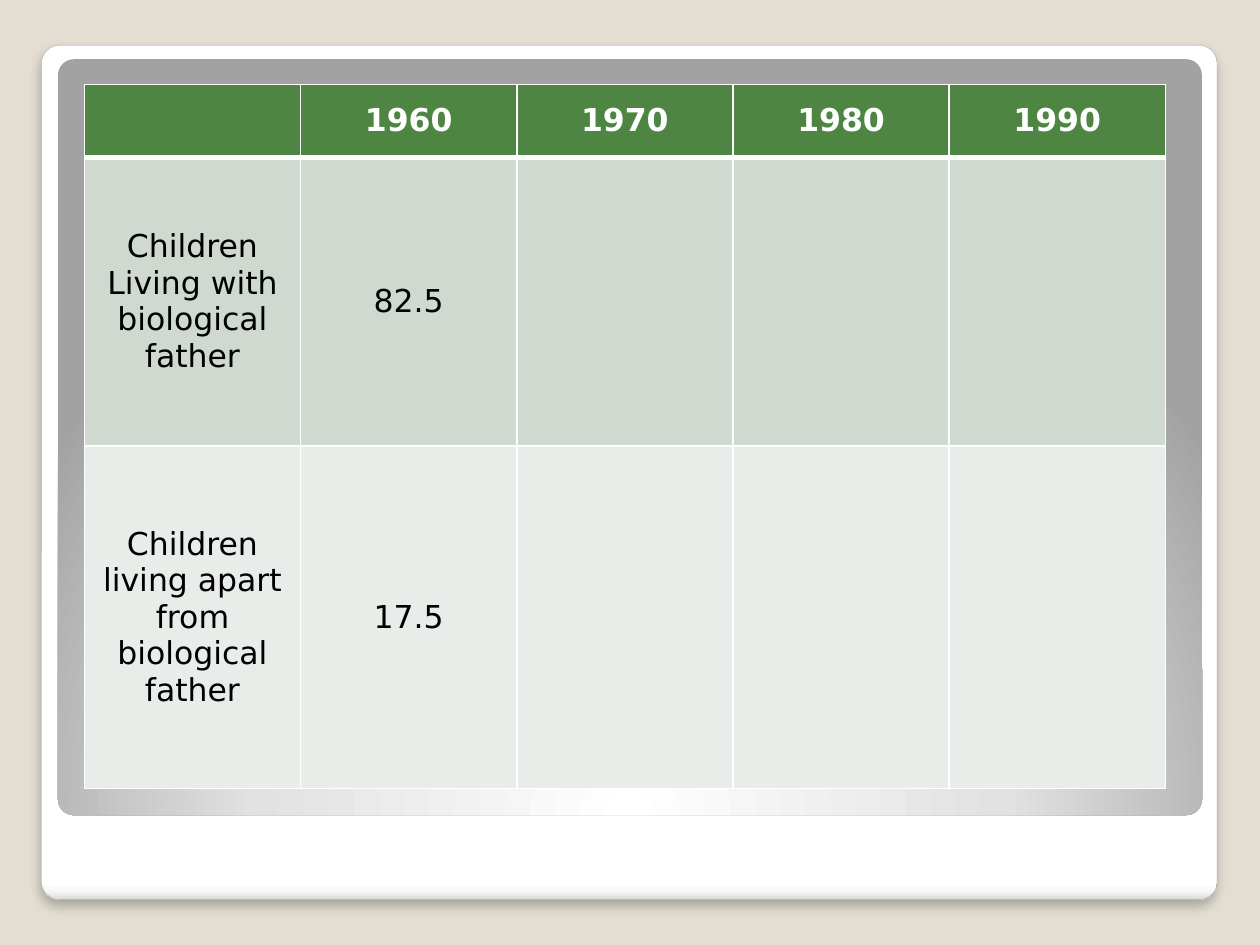
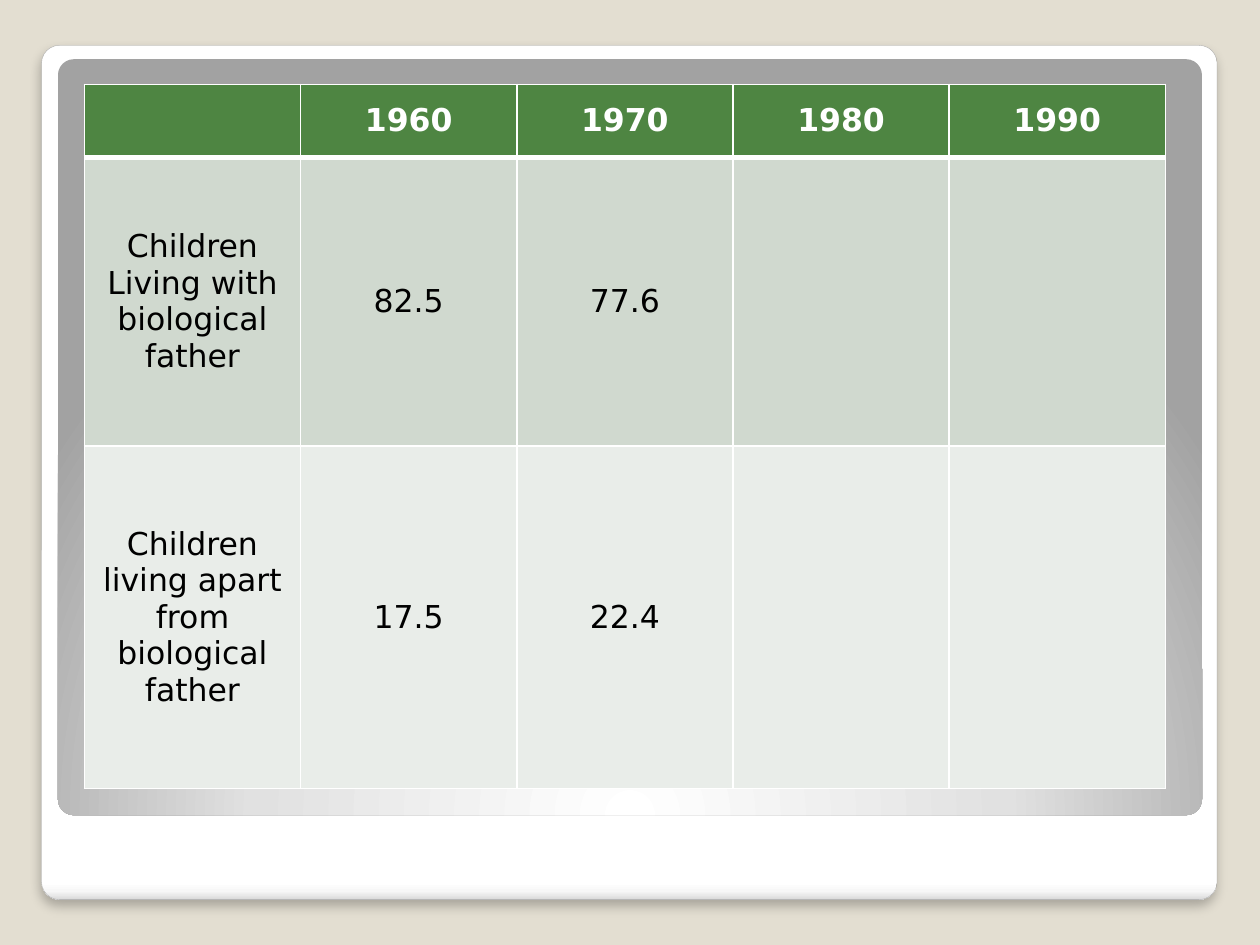
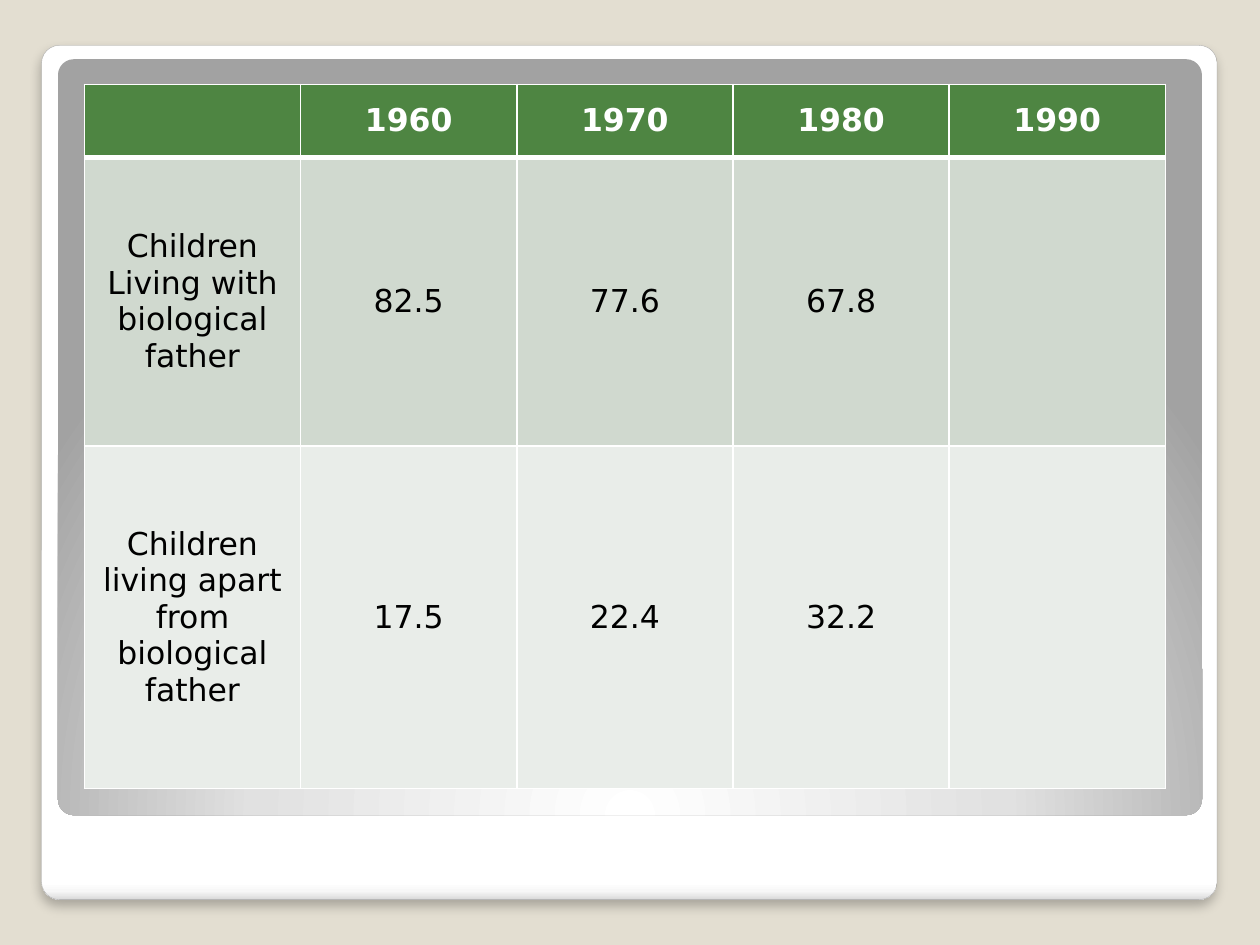
from pptx import Presentation
from pptx.dml.color import RGBColor
from pptx.enum.shapes import MSO_SHAPE
from pptx.enum.text import MSO_ANCHOR, PP_ALIGN
from pptx.oxml import parse_xml
from pptx.oxml.ns import nsdecls, qn
from pptx.util import Inches, Pt

BACKGROUND = "E3DED1"
WHITE = "FFFFFF"
BLACK = "000000"
ROW_FILLS = ["4E8542", "D0D9CF", "E9EDE9"]
ROW_HEIGHTS = [0.58, 2.29, 2.72]
TABLE_WIDTH = 8.58

ROWS = [
    ["", "1960", "1970", "1980", "1990"],
    ["Children Living with biological father", "82.5", "77.6", "67.8", ""],
    ["Children living apart from biological father", "17.5", "22.4", "32.2", ""],
]

PANELS = [
    (0.33, 0.36, 9.33, 6.78,
     [(0, WHITE), (98, WHITE), (99, "F7F7F7"), (100, "DADADA")],
     '<a:lin ang="5400000" scaled="0"/>'),
    (0.46, 0.47, 9.08, 6,
     [(0, WHITE), (55, "E1E1E1"), (100, "A2A2A2")],
     '<a:path path="circle"><a:fillToRect l="50000" t="175000" r="50000" b="-75000"/></a:path>'),
]


def color(hex_value):
    return RGBColor.from_string(hex_value)


def write_text(cell, text, size=18, font="DejaVu Sans", text_color=BLACK, bold=False):
    cell.vertical_anchor = MSO_ANCHOR.MIDDLE
    paragraph = cell.text_frame.paragraphs[0]
    paragraph.alignment = PP_ALIGN.CENTER
    run = paragraph.add_run()
    run.text = text
    run.font.size = Pt(size)
    run.font.name = font
    run.font.bold = bold
    run.font.color.rgb = color(text_color)


presentation = Presentation()
presentation.slide_width = Inches(10)
presentation.slide_height = Inches(7.5)
layout = presentation.slide_layouts[6]
background = presentation.slide_master.background.fill
background.solid()
background.fore_color.rgb = color(BACKGROUND)

slides = [presentation.slides.add_slide(layout) for number in range(3)]

panel_shapes = []
for left, top, width, height, stops, direction in PANELS:
    shape = slides[0].shapes.add_shape(
        MSO_SHAPE.ROUNDED_RECTANGLE,
        Inches(left), Inches(top), Inches(width), Inches(height))
    shape.adjustments[0] = 0.021
    shape.shadow.inherit = False
    shape.line.fill.background()
    shape.fill.solid()
    stop_list = "".join(
        f'<a:gs pos="{position * 1000}"><a:srgbClr val="{stop_color}"/></a:gs>'
        for position, stop_color in stops)
    gradient = parse_xml(
        f'<a:gradFill {nsdecls("a")} rotWithShape="1">'
        f'<a:gsLst>{stop_list}</a:gsLst>{direction}</a:gradFill>')
    properties = shape.element.spPr
    properties.replace(properties.find(qn("a:solidFill")), gradient)
    panel_shapes.append(shape)

frame = panel_shapes[0]
frame.line.color.rgb = color("A4A4A4")
frame.line.width = Pt(0.16)
frame.element.spPr.find(qn("a:effectLst")).append(parse_xml(
    f'<a:outerShdw {nsdecls("a")} blurRad="{Pt(6)}" dist="{Pt(4)}" dir="5400000" '
    f'algn="t" rotWithShape="0"><a:srgbClr val="{BLACK}"><a:alpha val="25000"/>'
    '</a:srgbClr></a:outerShdw>'))

for shape in panel_shapes:
    layout.shapes.element.append(shape.element)

for last_filled_column, slide in enumerate(slides, start=1):
    table = slide.shapes.add_table(
        len(ROWS), len(ROWS[0]), Inches(0.67), Inches(0.67),
        Inches(TABLE_WIDTH), Inches(sum(ROW_HEIGHTS))).table
    for column in table.columns:
        column.width = Inches(TABLE_WIDTH / len(ROWS[0]))
    for row_index, row in enumerate(ROWS):
        is_header = row_index == 0
        table.rows[row_index].height = Inches(ROW_HEIGHTS[row_index])
        for column_index, text in enumerate(row):
            cell = table.cell(row_index, column_index)
            borders = {"L": 1, "R": 1, "T": 3 if row_index == 1 else 1, "B": 3 if is_header else 1}
            cell_properties = cell._tc.get_or_add_tcPr()
            for side, border_width in borders.items():
                cell_properties.append(parse_xml(
                    f'<a:ln{side} {nsdecls("a")} w="{Pt(border_width)}"><a:solidFill>'
                    f'<a:srgbClr val="{WHITE}"/></a:solidFill></a:ln{side}>'))
            cell.fill.solid()
            cell.fill.fore_color.rgb = color(ROW_FILLS[row_index])
            if text and (is_header or column_index <= last_filled_column):
                write_text(cell, text, text_color=WHITE if is_header else BLACK, bold=is_header)

presentation.save("out.pptx")
